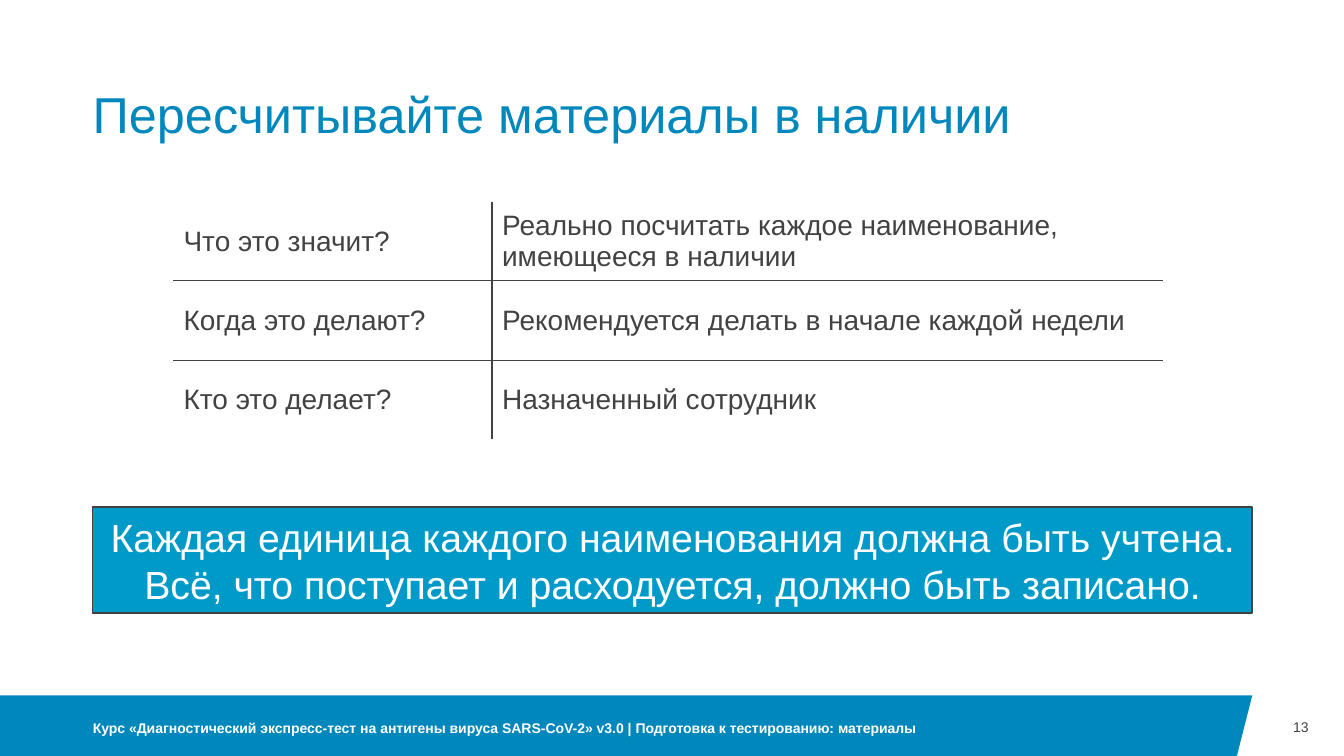
"""Build the slide about counting the testing materials in stock."""
from lxml import etree
from pptx import Presentation
from pptx import util as u
from pptx.dml.color import RGBColor
from pptx.enum import shapes, text
from pptx.oxml.ns import qn

GREY, BLUE, CYAN, WHITE = "424242", "0087BC", "009AC9", "FFFFFF"
LEFT, MIDDLE, BOTTOM = 0.92, text.MSO_ANCHOR.MIDDLE, text.MSO_ANCHOR.BOTTOM
ALIGN = text.PP_ALIGN


def colour(hex_value):
    return RGBColor.from_string(hex_value)


def write(frame, wording, size, ink, anchor=MIDDLE, align=ALIGN.LEFT, inset=0, bold=False, spacing=1.0):
    margin = u.Inches(inset)
    frame_format = {"word_wrap": True, "vertical_anchor": anchor, "margin_left": margin,
                    "margin_right": margin, "margin_top": margin, "margin_bottom": margin}
    for attribute, value in frame_format.items():
        setattr(frame, attribute, value)
    paragraph = frame.paragraphs[0]
    paragraph.alignment, paragraph.line_spacing = align, spacing
    run = paragraph.add_run()
    run.text = wording
    for attribute, value in {"name": "Arial", "size": u.Pt(size), "bold": bold}.items():
        setattr(run.font, attribute, value)
    run.font.color.rgb = colour(ink)


deck = Presentation()
deck.slide_width, deck.slide_height = u.Inches(13.33), u.Inches(7.5)
slide = deck.slides.add_slide(deck.slide_layouts[6])

outline = slide.shapes.build_freeform(0, u.Inches(6.9), scale=1.0)
corners = [(12.42, 6.9), (12.26, 7.53), (0, 7.53)]
outline.add_line_segments([(u.Inches(x), u.Inches(y)) for x, y in corners], close=True)
footer_band = outline.convert_to_shape()
footer_band.shadow.inherit = False
footer_band.fill.solid()
footer_band.fill.fore_color.rgb = colour(BLUE)
footer_band.line.fill.background()

answers = [
    ("Что это значит?", "Реально посчитать каждое наименование, имеющееся в наличии"),
    ("Когда это делают?", "Рекомендуется делать в начале каждой недели"),
    ("Кто это делает?", "Назначенный сотрудник"),
]
table_place = [u.Inches(n) for n in (1.72, 2, 9.81, 2.36)]
counting = slide.shapes.add_table(len(answers), 2, *table_place).table
counting.first_row = counting.horz_banding = False
for column, width in zip(counting.columns, (3.16, 6.65)):
    column.width = u.Inches(width)
for row, pair in enumerate(answers):
    counting.rows[row].height = u.Inches(2.36 / len(answers))
    for col, wording in enumerate(pair):
        cell = counting.cell(row, col)
        cell.fill.background()
        cell.vertical_anchor = MIDDLE
        run = cell.text_frame.paragraphs[0].add_run()
        run.text = wording
        run.font.name, run.font.size = "Arial", u.Pt(20)
        run.font.color.rgb = colour(GREY)
        inner_edges = {"lnL": col > 0, "lnR": col == 0,
                       "lnT": row > 0, "lnB": row < len(answers) - 1}
        properties = cell._tc.get_or_add_tcPr()
        for position, (edge, drawn) in enumerate(inner_edges.items()):
            border = etree.Element(qn(f"a:{edge}"), w=str(u.Pt(1)))
            if drawn:
                ink = etree.SubElement(border, qn("a:solidFill"))
                etree.SubElement(ink, qn("a:srgbClr"), val=GREY)
            else:
                etree.SubElement(border, qn("a:noFill"))
            properties.insert(position, border)

rule_place = [u.Inches(n) for n in (LEFT, 5.03, 11.5, 1.05)]
rule = slide.shapes.add_shape(shapes.MSO_SHAPE.RECTANGLE, *rule_place)
rule.shadow.inherit = False
rule.fill.solid()
rule.fill.fore_color.rgb = colour(CYAN)
rule.line.color.rgb = colour(GREY)
rule.line.width = u.Pt(1)
write(rule.text_frame,
      "Каждая единица каждого наименования должна быть учтена. "
      "Всё, что поступает и расходуется, должно быть записано.",
      28, WHITE, align=ALIGN.CENTER, inset=0.06)

captions = [
    ((LEFT, 0.4, 11.5, 1.03), "Пересчитывайте материалы в наличии",
     {"size": 36, "ink": BLUE, "anchor": BOTTOM, "spacing": 0.9}),
    ((LEFT, 6.95, 9.48, 0.55),
     "Курс «Диагностический экспресс-тест на антигены вируса SARS-CoV-2» v3.0"
     " | Подготовка к тестированию: материалы",
     {"size": 10, "ink": WHITE, "bold": True}),
    ((12.42, 6.9, 0.56, 0.63), "13", {"size": 10, "ink": GREY, "align": ALIGN.RIGHT}),
]
for place, wording, style in captions:
    caption = slide.shapes.add_textbox(*[u.Inches(n) for n in place])
    write(caption.text_frame, wording, **style)

deck.save("out.pptx")
